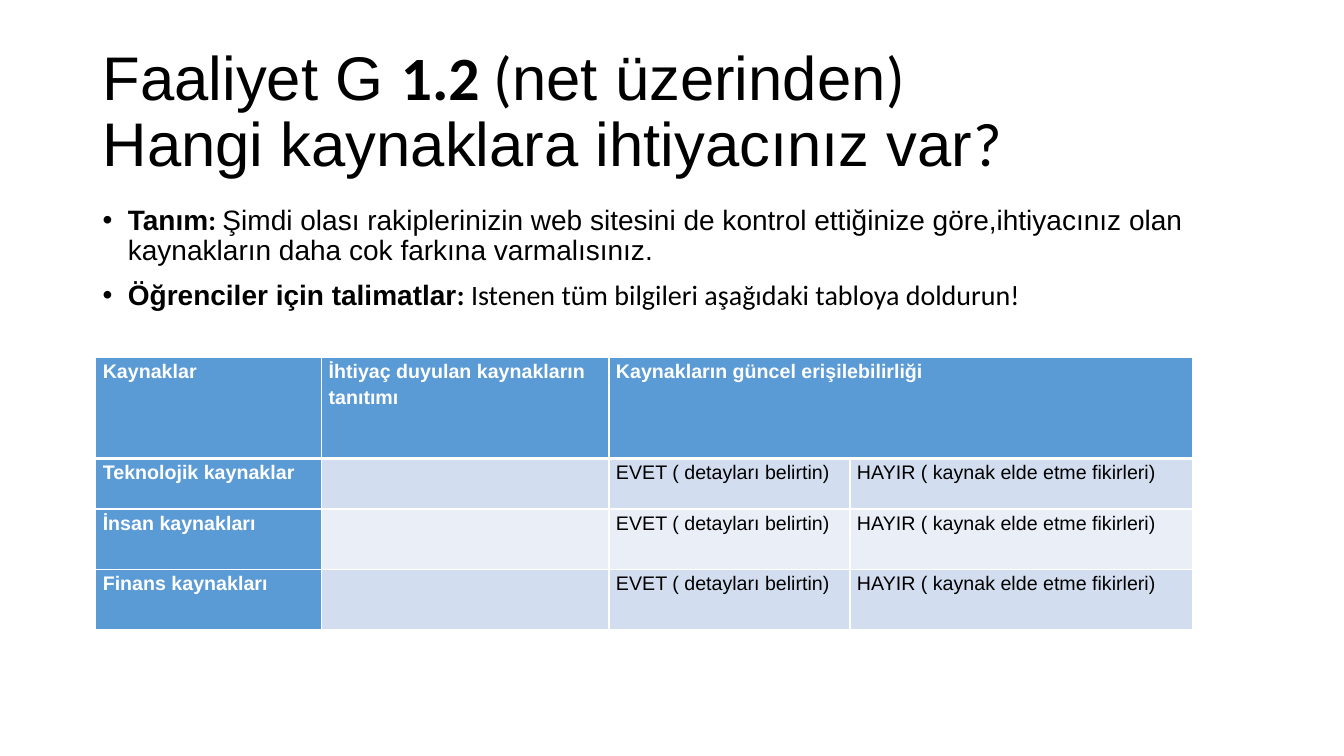
from lxml import etree
from pptx import Presentation
from pptx.dml.color import RGBColor
from pptx.enum import text
from pptx.oxml import ns
from pptx.util import Inches, Pt

BLACK = RGBColor(0x00, 0x00, 0x00)
WHITE = RGBColor(0xFF, 0xFF, 0xFF)
BLUE = RGBColor(0x5B, 0x9B, 0xD5)
BAND_DARK = RGBColor(0xD2, 0xDE, 0xEF)
BAND_LIGHT = RGBColor(0xEA, 0xEF, 0xF7)


def add_run(paragraph, wording, size, font="Arial", bold=False, color=BLACK):
    run = paragraph.add_run()
    run.text = wording
    run.font.size = Pt(size)
    run.font.name = font
    run.font.bold = bold
    run.font.color.rgb = color


def add_border(cell, side, width):
    properties = cell._tc.get_or_add_tcPr()
    line = etree.SubElement(properties, ns.qn("a:ln" + side), w=str(Pt(width)))
    fill = etree.SubElement(line, ns.qn("a:solidFill"))
    etree.SubElement(fill, ns.qn("a:srgbClr"), val=str(WHITE))


presentation = Presentation()
presentation.slide_width = Inches(13.33)
presentation.slide_height = Inches(7.5)
slide = presentation.slides.add_slide(presentation.slide_layouts[6])

# Title
title = slide.shapes.add_textbox(Inches(0.92), Inches(0.4), Inches(11.5), Inches(1.45))
title.text_frame.word_wrap = True
title.text_frame.vertical_anchor = text.MSO_ANCHOR.MIDDLE
paragraph = title.text_frame.paragraphs[0]
paragraph.line_spacing = 0.9
add_run(paragraph, "Faaliyet G ", 44)
add_run(paragraph, "1.2", 44, "Calibri", bold=True)
add_run(paragraph, " (", 44, "Calibri")
add_run(paragraph, "net üzerinden", 44)
add_run(paragraph, ")", 44, "Calibri")
paragraph.add_line_break()
add_run(paragraph, "Hangi kaynaklara ihtiyacınız var", 44)
add_run(paragraph, "?", 44, "Calibri")

# Bulleted instructions
instructions = [
    ("Tanım", "Şimdi olası rakiplerinizin web sitesini de kontrol ettiğinize göre,"
     "ihtiyacınız olan kaynakların daha cok farkına varmalısınız.", "Arial"),
    ("Öğrenciler için talimatlar",
     "Istenen tüm bilgileri aşağıdaki tabloya doldurun!", "Calibri"),
]
body = slide.shapes.add_textbox(Inches(0.92), Inches(2), Inches(11.5), Inches(4.76))
body.text_frame.word_wrap = True
for index, (label, wording, font) in enumerate(instructions):
    paragraph = body.text_frame.add_paragraph() if index else body.text_frame.paragraphs[0]
    paragraph.line_spacing = 0.9
    paragraph.space_before = Pt(10)
    properties = paragraph._p.get_or_add_pPr()
    properties.set("marL", str(Inches(0.25)))
    properties.set("indent", str(Inches(-0.25)))
    etree.SubElement(properties, ns.qn("a:buFont"), typeface="Arial")
    etree.SubElement(properties, ns.qn("a:buChar"), char="•")
    add_run(paragraph, label, 20, bold=True)
    add_run(paragraph, ": ", 20, "Calibri", bold=True)
    add_run(paragraph, wording, 20, font)

# Resource table
yes_no = ["EVET ( detayları belirtin)", "HAYIR ( kaynak elde etme fikirleri)"]
rows = [["Kaynaklar", "İhtiyaç duyulan kaynakların tanıtımı",
         "Kaynakların güncel erişilebilirliği", ""]]
for resource in ["Teknolojik kaynaklar", "İnsan kaynakları", "Finans kaynakları"]:
    rows.append([resource, ""] + yes_no)
column_widths = [2.24, 2.85, 2.39, 3.4]
row_heights = [1, 0.5, 0.6, 0.6]

table = slide.shapes.add_table(
    len(rows), len(column_widths), Inches(0.95), Inches(3.55),
    Inches(sum(column_widths)), Inches(sum(row_heights))).table
table.first_col = True
for column, width in zip(table.columns, column_widths):
    column.width = Inches(width)
for row, height in zip(table.rows, row_heights):
    row.height = Inches(height)
table.cell(0, 2).merge(table.cell(0, 3))

for row_index, row in enumerate(rows):
    for column_index, wording in enumerate(row):
        cell = table.cell(row_index, column_index)
        heading = row_index == 0 or column_index == 0
        # A thicker line parts the header from the rows below
        add_border(cell, "L", 1)
        add_border(cell, "R", 1)
        add_border(cell, "T", 3 if row_index == 1 else 1)
        add_border(cell, "B", 3 if row_index == 0 else 1)
        cell.fill.solid()
        band = BAND_DARK if row_index % 2 else BAND_LIGHT
        cell.fill.fore_color.rgb = BLUE if heading else band
        if wording:
            cell.margin_left = cell.margin_right = Inches(0.07)
            cell.margin_top = cell.margin_bottom = 0
            paragraph = cell.text_frame.paragraphs[0]
            paragraph.line_spacing = 1.15
            paragraph.space_after = Pt(10)
            add_run(paragraph, wording, 14, bold=heading, color=WHITE if heading else BLACK)

presentation.save("out.pptx")
